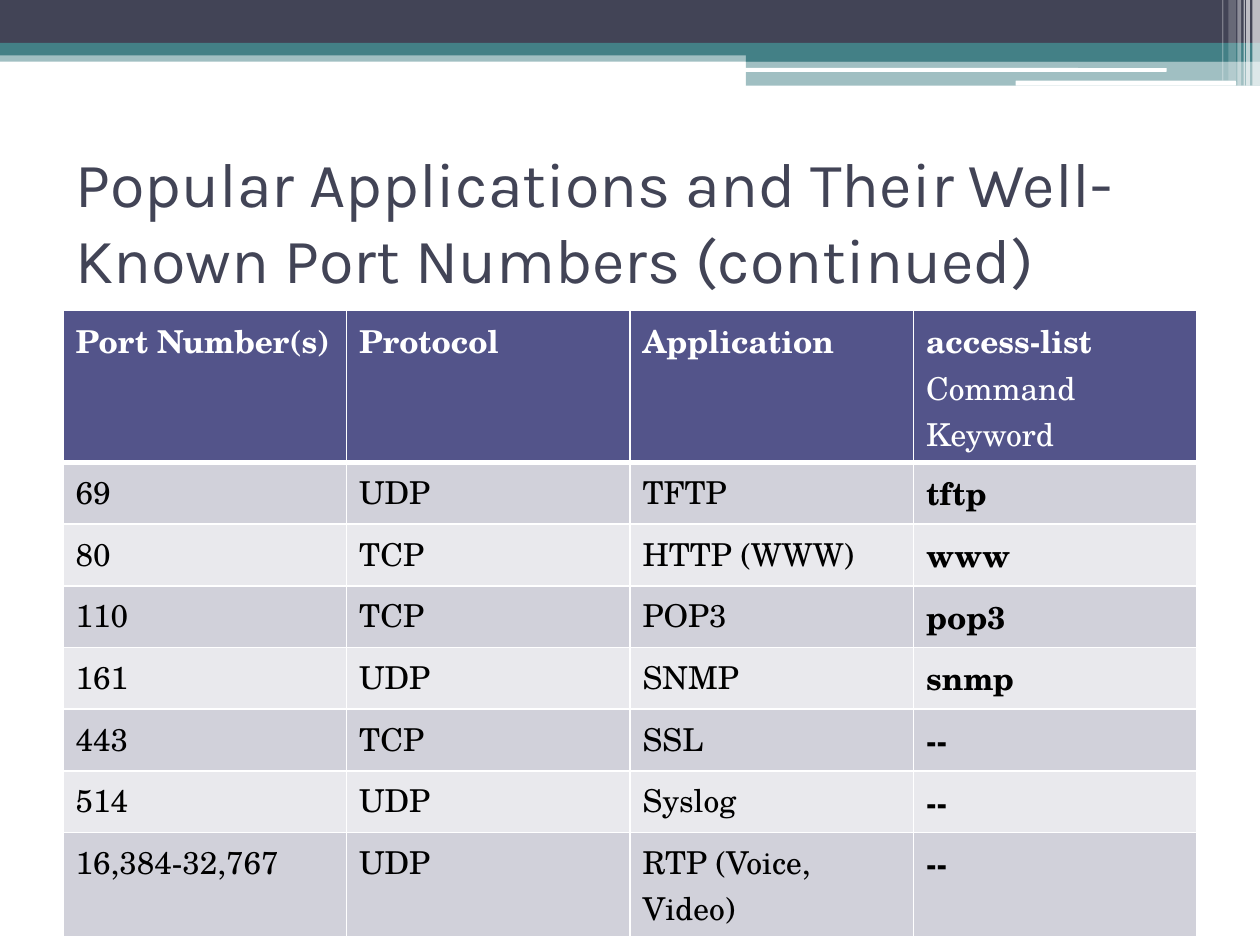
from dataclasses import dataclass

from lxml.etree import SubElement
from pptx import Presentation
from pptx.dml.color import RGBColor
from pptx.enum.shapes import MSO_SHAPE
from pptx.enum.text import MSO_ANCHOR
from pptx.oxml import parse_xml
from pptx.oxml.ns import nsdecls, qn
from pptx.util import Inches, Pt


@dataclass(frozen=True)
class Theme:
    navy: str = "424456"
    teal: str = "438086"
    white: str = "FFFFFF"
    black: str = "000000"
    header: str = "53548A"
    bands: tuple = ("D1D1DA", "E9E9ED")
    title_font: str = "Karla"
    table_font: str = "TeX Gyre Schola"
    title_size: int = 36
    table_size: int = 18


theme = Theme()


def add_text(paragraph, text, *, font, size, color, bold=False):
    run = paragraph.add_run()
    run.text = text
    run.font.name = font
    run.font.size = Pt(size)
    run.font.bold = bold
    run.font.color.rgb = RGBColor.from_string(color)


def set_borders(cell, color, widths):
    properties = cell._tc.get_or_add_tcPr()
    for index, (side, width) in enumerate(zip("LRTB", widths)):
        properties.insert(index, parse_xml(
            f'<a:ln{side} {nsdecls("a")} w="{Pt(width)}"><a:solidFill>'
            f'<a:srgbClr val="{color}"/></a:solidFill></a:ln{side}>'))


presentation = Presentation()
presentation.slide_width = Inches(10)
presentation.slide_height = Inches(7.5)
slide = presentation.slides.add_slide(presentation.slide_layouts[6])

# Top banner: left, top, width, height, colour, opacity in percent, kind
bar, rounded = MSO_SHAPE.RECTANGLE, MSO_SHAPE.ROUNDED_RECTANGLE
banner = [
    (0, 0.4, 10, 0.09, theme.teal, 50, bar),
    (0, 0, 10, 0.34, theme.navy, 100, bar),
    (0, 0.34, 10, 0.1, theme.teal, 100, bar),
    (5.92, 0.39, 4.08, 0.1, theme.teal, 100, bar),
    (5.92, 0.48, 4.08, 0.2, theme.teal, 50, bar),
    (5.91, 0.54, 3.35, 0.03, theme.white, 100, rounded),
    (8.06, 0.64, 1.75, 0.04, theme.white, 100, rounded),
]
# Translucent stripes at the right edge: left, width, height, opacity
stripes = [
    (9.94, 0.06, 0.68, 65),
    (9.89, 0.03, 0.68, 65),
    (9.87, 0.01, 0.68, 60),
    (9.82, 0.03, 0.68, 40),
    (9.75, 0.06, 0.64, 20),
    (9.7, 0.01, 0.64, 30),
]
banner += [(left, 0, width, height, theme.white, opacity, bar)
           for left, width, height, opacity in stripes]
for left, top, width, height, color, opacity, kind in banner:
    shape = slide.shapes.add_shape(
        kind, Inches(left), Inches(top), Inches(width), Inches(height))
    shape.shadow.inherit = False
    shape.line.fill.background()
    shape.fill.solid()
    shape.fill.fore_color.rgb = RGBColor.from_string(color)
    if opacity < 100:
        color_element = shape._element.spPr.find(qn("a:solidFill"))[0]
        SubElement(color_element, qn("a:alpha"), val=str(opacity * 1000))

# Title
title = slide.shapes.add_textbox(Inches(0.5), Inches(1.25), Inches(9), Inches(1))
title.text_frame.word_wrap = True
title.text_frame.vertical_anchor = MSO_ANCHOR.MIDDLE
add_text(title.text_frame.paragraphs[0],
         "Popular Applications and Their Well-Known Port Numbers (continued)",
         font=theme.title_font, size=theme.title_size, color=theme.navy)

# Port table, with rows tall enough for their wrapped text
rows = [
    ("Port Number(s)", "Protocol", "Application", "access-list "),
    ("69", "UDP", "TFTP", "tftp"),
    ("80", "TCP", "HTTP (WWW)", "www"),
    ("110", "TCP", "POP3", "pop3"),
    ("161", "UDP", "SNMP", "snmp"),
    ("443", "TCP", "SSL", "--"),
    ("514", "UDP", "Syslog", "--"),
    ("16,384-32,767", "UDP", "RTP (Voice, Video)", "--"),
]
row_heights = [1.21] + [0.49] * 6 + [0.83]
keyword_column = len(rows[0]) - 1
table = slide.shapes.add_table(
    len(rows), len(rows[0]), Inches(0.5), Inches(2.46),
    Inches(9), Inches(sum(row_heights))).table
for column in table.columns:
    column.width = Inches(2.25)

for row_index, (texts, height) in enumerate(zip(rows, row_heights)):
    table.rows[row_index].height = Inches(height)
    is_header = row_index == 0
    fill = theme.header if is_header else theme.bands[(row_index - 1) % 2]
    color = theme.white if is_header else theme.black
    top_width = 3 if row_index == 1 else 1
    bottom_width = 3 if is_header else 1
    for column_index, text in enumerate(texts):
        cell = table.cell(row_index, column_index)
        cell.fill.solid()
        cell.fill.fore_color.rgb = RGBColor.from_string(fill)
        set_borders(cell, theme.white, (1, 1, top_width, bottom_width))
        paragraph = cell.text_frame.paragraphs[0]
        is_keyword = column_index == keyword_column
        add_text(paragraph, text, font=theme.table_font, size=theme.table_size,
                 color=color, bold=is_header or is_keyword)
        if is_header and is_keyword:
            add_text(paragraph, "Command Keyword", font=theme.table_font,
                     size=theme.table_size, color=color)

presentation.save("out.pptx")
